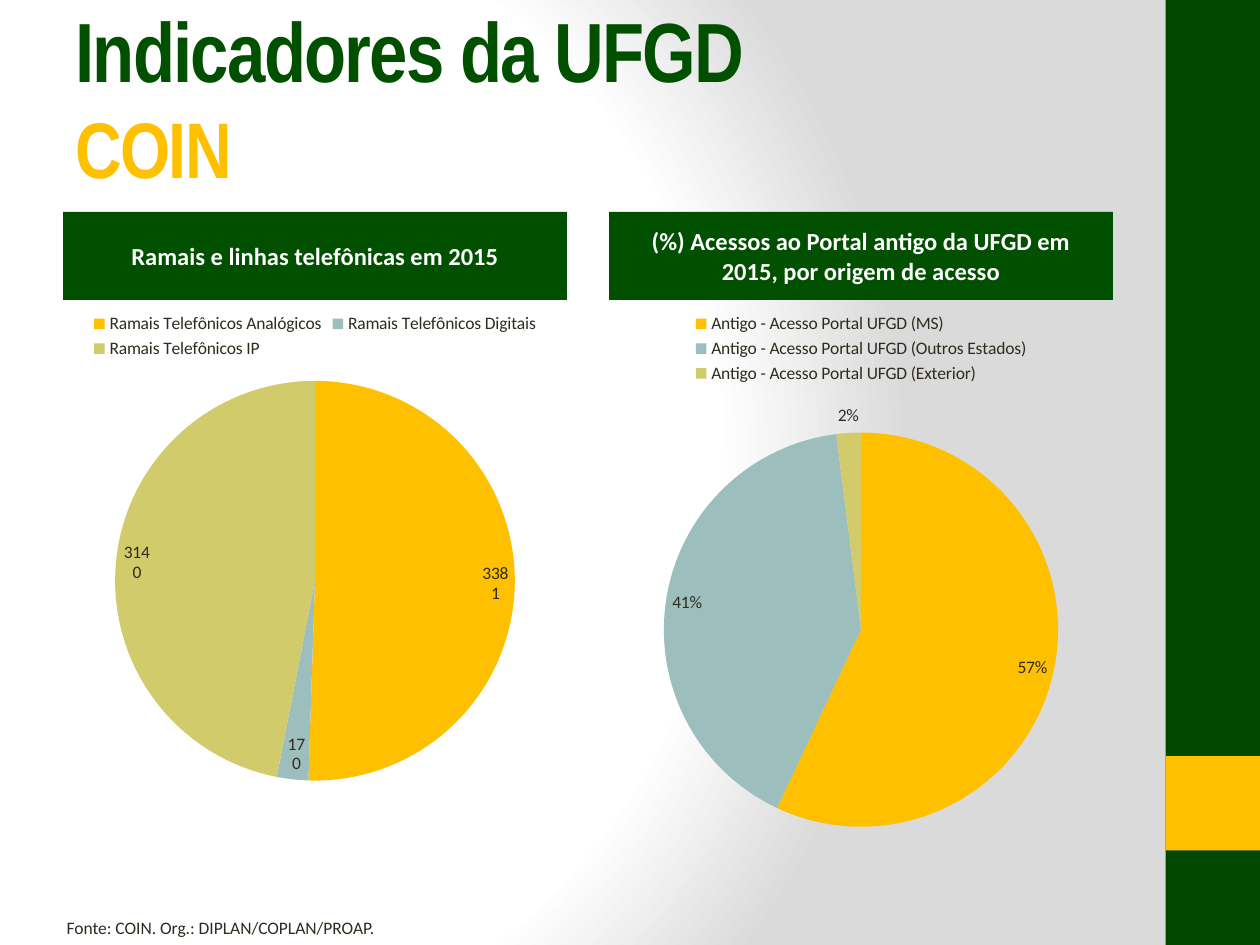
from dataclasses import dataclass

from lxml.etree import SubElement
from pptx import Presentation
from pptx.chart.data import CategoryChartData as ChartData
from pptx.dml.color import RGBColor as RGB
from pptx.enum.chart import XL_CHART_TYPE as ChartType
from pptx.enum.chart import XL_LABEL_POSITION as LabelPos
from pptx.enum.chart import XL_LEGEND_POSITION as LegendPos
from pptx.enum.shapes import MSO_SHAPE as Shape
from pptx.enum.text import MSO_ANCHOR as Anchor
from pptx.enum.text import MSO_AUTO_SIZE as AutoSize
from pptx.enum.text import PP_ALIGN as Align
from pptx.oxml import parse_xml
from pptx.oxml.ns import nsdecls, qn
from pptx.util import Pt


@dataclass(frozen=True)
class Theme:
    green: str = "005000"
    dark_green: str = "004800"
    gold: str = "FFC000"
    teal: str = "9CBEBD"
    olive: str = "D2CB6C"
    ink: str = "2F2B20"
    white: str = "FFFFFF"
    gray: str = "DADADA"
    title_font: str = "Arial Narrow"
    body_font: str = "Calibri"
    title_size: int = 48
    subtitle_size: int = 45
    heading_size: int = 14
    small_size: int = 10


def add_text(p, text, *, font, size, color, bold=False, spacing=None):
    r = p.add_run()
    r.text = text
    r.font.name = font
    r.font.size = Pt(size)
    r.font.bold = bold
    r.font.color.rgb = RGB.from_string(color)
    if spacing is not None:
        r._r.get_or_add_rPr().set("spc", str(spacing * 100))
    return r


class Deck:
    def __init__(self, s, theme):
        self.s = s
        self.theme = theme

    def place(self, sp, x, y, w, h):
        sp.left, sp.top, sp.width, sp.height = Pt(x), Pt(y), Pt(w), Pt(h)

    def fill(self, sp, color):
        sp.fill.solid()
        sp.fill.fore_color.rgb = RGB.from_string(color)

    def background(self):
        t = self.theme
        self.s.background.fill.solid()
        bg = self.s._element.cSld.find(qn("p:bg")).find(qn("p:bgPr"))
        stops = ((0, t.white), (75, t.white), (100, t.gray))
        gs = "".join(
            f'<a:gs pos="{pos * 1000}"><a:srgbClr val="{color}"/></a:gs>'
            for pos, color in stops
        )
        grad = parse_xml(
            f'<a:gradFill {nsdecls("a")} rotWithShape="1"><a:gsLst>{gs}</a:gsLst>'
            '<a:path path="circle"><a:fillToRect l="20000" t="50000" '
            'r="100000" b="50000"/></a:path></a:gradFill>'
        )
        bg.replace(bg.find(qn("a:solidFill")), grad)

    def band(self, x, y, w, h, color):
        sp = self.s.shapes.add_shape(Shape.RECTANGLE, Pt(x), Pt(y), Pt(w), Pt(h))
        self.fill(sp, color)
        sp.line.fill.background()
        sp.shadow.inherit = False

    def title(self, text, subtitle, *box):
        t = self.theme
        sp = self.s.shapes.title
        self.place(sp, *box)
        tf = sp.text_frame
        tf.auto_size = AutoSize.NONE
        tf.vertical_anchor = Anchor.MIDDLE
        p = tf.paragraphs[0]
        p.alignment = Align.LEFT
        style = dict(font=t.title_font, bold=True, spacing=-1)
        add_text(p, text, size=t.title_size, color=t.green, **style)
        p.add_line_break()
        add_text(p, subtitle, size=t.subtitle_size, color=t.gold, **style)

    def heading(self, idx, text, *box):
        t = self.theme
        sp = self.s.placeholders[idx]
        self.place(sp, *box)
        self.fill(sp, t.green)
        tf = sp.text_frame
        tf.auto_size = AutoSize.NONE
        tf.vertical_anchor = Anchor.MIDDLE
        p = tf.paragraphs[0]
        p.alignment = Align.CENTER
        add_text(p, text, font=t.body_font, size=t.heading_size,
                 color=t.white, bold=True)

    def pie(self, values, show_value, *box):
        t = self.theme
        data = ChartData()
        data.categories = list(values)
        data.add_series("Series 1", list(values.values()))
        chart = self.s.shapes.add_chart(
            ChartType.PIE, *(Pt(v) for v in box), data).chart
        chart.has_title = False
        chart.font.name = t.body_font
        chart.font.size = Pt(t.small_size)
        chart.font.color.rgb = RGB.from_string(t.ink)
        chart.has_legend = True
        chart.legend.position = LegendPos.TOP
        chart.legend.include_in_layout = False
        plot = chart.plots[0]
        plot.vary_by_categories = True
        for i, color in enumerate((t.gold, t.teal, t.olive)):
            self.fill(plot.series[0].points[i].format, color)
        plot.has_data_labels = True
        labels = plot.data_labels
        labels.show_value = show_value
        labels.show_percentage = True
        labels.number_format = "#,##0" if show_value else "0%"
        labels.number_format_is_linked = False
        labels.position = LabelPos.BEST_FIT
        if show_value:
            sep = SubElement(labels._element, qn("c:separator"))
            sep.text = "\n"
            labels._element.find(qn("c:showBubbleSize")).addnext(sep)

    def source(self, text, *box):
        t = self.theme
        sp = self.s.shapes.add_textbox(*(Pt(v) for v in box))
        tf = sp.text_frame
        tf.word_wrap = True
        add_text(tf.paragraphs[0], text, font=t.body_font,
                 size=t.small_size, color=t.ink)

    def remove_empty(self):
        for sp in list(self.s.placeholders):
            if not sp.text_frame.text:
                sp._element.getparent().remove(sp._element)


def main():
    prs = Presentation()
    prs.slide_width, prs.slide_height = Pt(720), Pt(540)
    t = Theme()
    deck = Deck(prs.slides.add_slide(prs.slide_layouts[4]), t)
    deck.background()
    deck.band(666, 0, 54, 540, t.dark_green)
    deck.band(666, 432, 54, 54, t.gold)
    deck.title("Indicadores da UFGD", "COIN", 36, 21.6, 600, 67)

    portal = "Antigo - Acesso Portal UFGD"
    columns = (
        (1, "Ramais e linhas telefônicas em 2015", True,
         {"Ramais Telefônicos Analógicos": 338,
          "Ramais Telefônicos Digitais": 17,
          "Ramais Telefônicos IP": 314}),
        (3, "(%) Acessos ao Portal antigo da UFGD em 2015, por origem de acesso",
         False,
         {f"{portal} (MS)": 57,
          f"{portal} (Outros Estados)": 41,
          f"{portal} (Exterior)": 2}),
    )
    left, width, gap = 36, 288, 24
    for i, (idx, text, show_value, values) in enumerate(columns):
        x = left + i * (width + gap)
        deck.heading(idx, text, x, 121, width, 50.4)
        deck.pie(values, show_value, x, 171.4, width, 311)

    deck.source("Fonte: COIN. Org.: DIPLAN/COPLAN/PROAP.", 31, 520.6, 618, 19.4)
    deck.remove_empty()
    prs.save("out.pptx")


if __name__ == "__main__":
    main()
